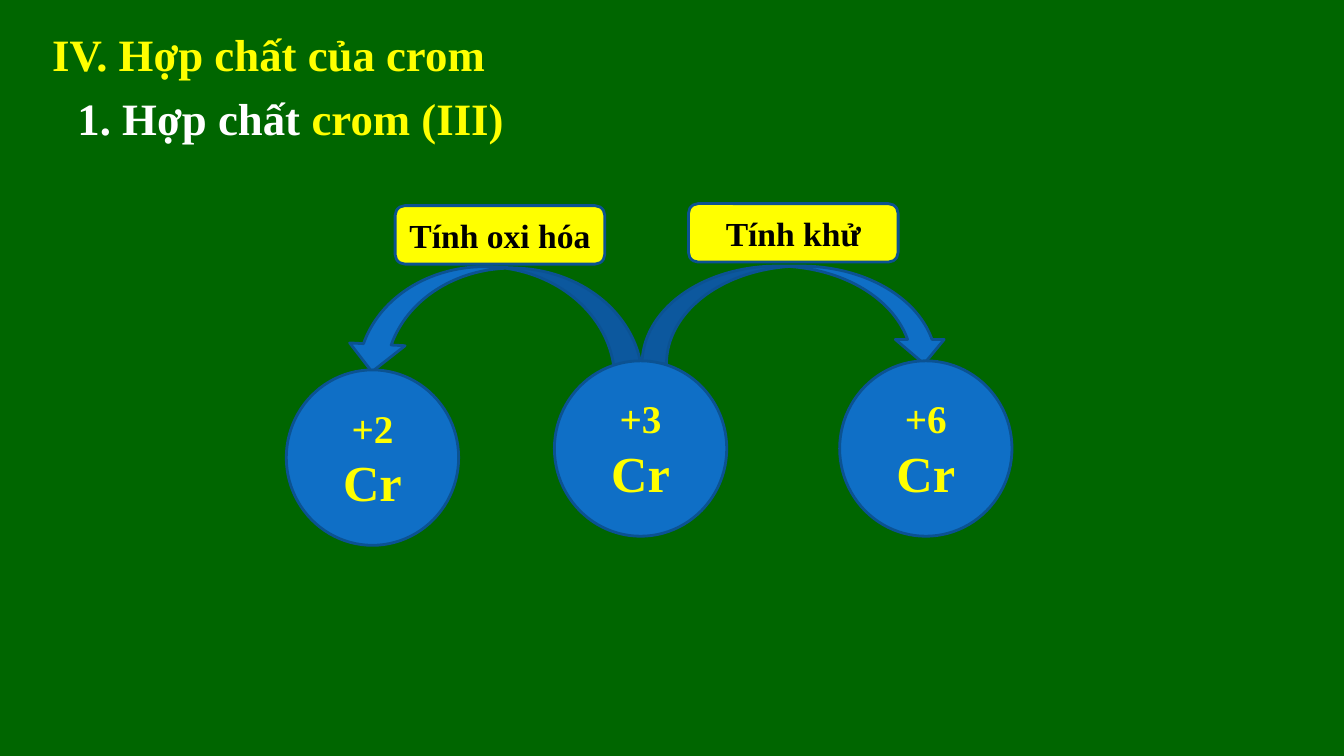
"""Build a slide on the redox behaviour of chromium(III) compounds."""
from pptx import Presentation
from pptx.dml.color import RGBColor
from pptx.enum.shapes import MSO_SHAPE
from pptx.enum.text import MSO_ANCHOR, MSO_AUTO_SIZE, PP_ALIGN
from pptx.util import Pt

HEADINGS = [
    ((30.24, 15.12, 696.24, 46.08), [("IV. Hợp chất của crom", "yellow")]),
    ((48.24, 61.2, 479.52, 46.08), [("1. Hợp chất ", "white"), ("crom (III)", "yellow")]),
]
ARROWS = [
    (MSO_SHAPE.CURVED_UP_ARROW, (247.68, 190.8, 213.12, 79.2), 182.9),
    (MSO_SHAPE.CURVED_DOWN_ARROW, (458.64, 190.08, 218.88, 69.84), 0),
]
LABELS = [("Tính oxi hóa", 282.24, 146.88), ("Tính khử", 491.76, 145.44)]
ATOMS = [("+6", 599.76, 257.76), ("+3", 396, 257.76), ("+2", 204.48, 264.24)]
LABEL_SIZE = (149.76, 41.76)
ATOM_SIZE = (123.12, 125.28)

THEME = {
    "font": "Times New Roman",
    "green": "006600", "blue": "0F6FC6", "outline": "0B5292",
    "yellow": "FFFF00", "white": "FFFFFF", "black": "000000",
    "heading": 32, "label": 24, "charge": 28, "symbol": 36,
}


def color(name):
    return RGBColor.from_string(THEME[name])


def add_run(paragraph, text, size, color_name):
    run = paragraph.add_run()
    run.text = text
    run.font.name = THEME["font"]
    run.font.size = Pt(THEME[size])
    run.font.bold = True
    run.font.color.rgb = color(color_name)


def add_figure(slide, kind, box, fill, lines=(), text_color="yellow"):
    shape = slide.shapes.add_shape(kind, *map(Pt, box))
    shape.shadow.inherit = False
    shape.fill.solid()
    shape.fill.fore_color.rgb = color(fill)
    shape.line.color.rgb = color("outline")
    shape.line.width = Pt(2)
    frame = shape.text_frame
    frame.vertical_anchor = MSO_ANCHOR.MIDDLE
    for index, (text, size) in enumerate(lines):
        paragraph = frame.add_paragraph() if index else frame.paragraphs[0]
        paragraph.alignment = PP_ALIGN.CENTER
        add_run(paragraph, text, size, text_color)
    return shape


def add_heading(slide, box, runs):
    frame = slide.shapes.add_textbox(*map(Pt, box)).text_frame
    frame.word_wrap = True
    frame.auto_size = MSO_AUTO_SIZE.SHAPE_TO_FIT_TEXT
    frame.vertical_anchor = MSO_ANCHOR.MIDDLE
    for text, color_name in runs:
        add_run(frame.paragraphs[0], text, "heading", color_name)


def main():
    presentation = Presentation()
    presentation.slide_width, presentation.slide_height = Pt(960), Pt(540)
    slide = presentation.slides.add_slide(presentation.slide_layouts[6])
    slide.background.fill.solid()
    slide.background.fill.fore_color.rgb = color("green")

    for kind, box, rotation in ARROWS:
        add_figure(slide, kind, box, "blue").rotation = rotation
    for text, left, top in LABELS:
        add_figure(slide, MSO_SHAPE.ROUNDED_RECTANGLE, (left, top, *LABEL_SIZE),
                   "yellow", [(text, "label")], "black")
    for charge, left, top in ATOMS:
        add_figure(slide, MSO_SHAPE.OVAL, (left, top, *ATOM_SIZE),
                   "blue", [(charge, "charge"), ("Cr", "symbol")])
    for box, runs in HEADINGS:
        add_heading(slide, box, runs)
    presentation.save("out.pptx")


if __name__ == "__main__":
    main()
